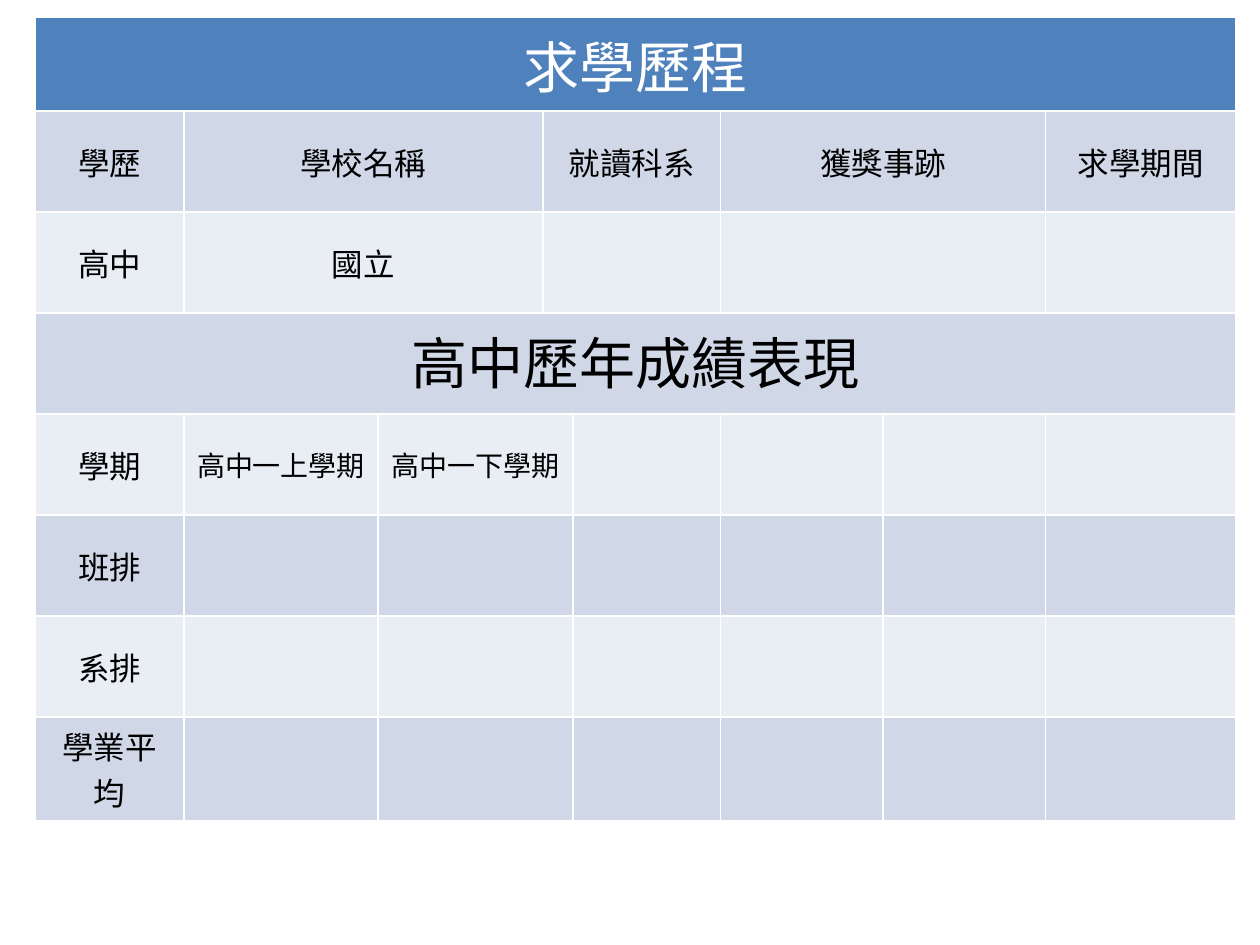
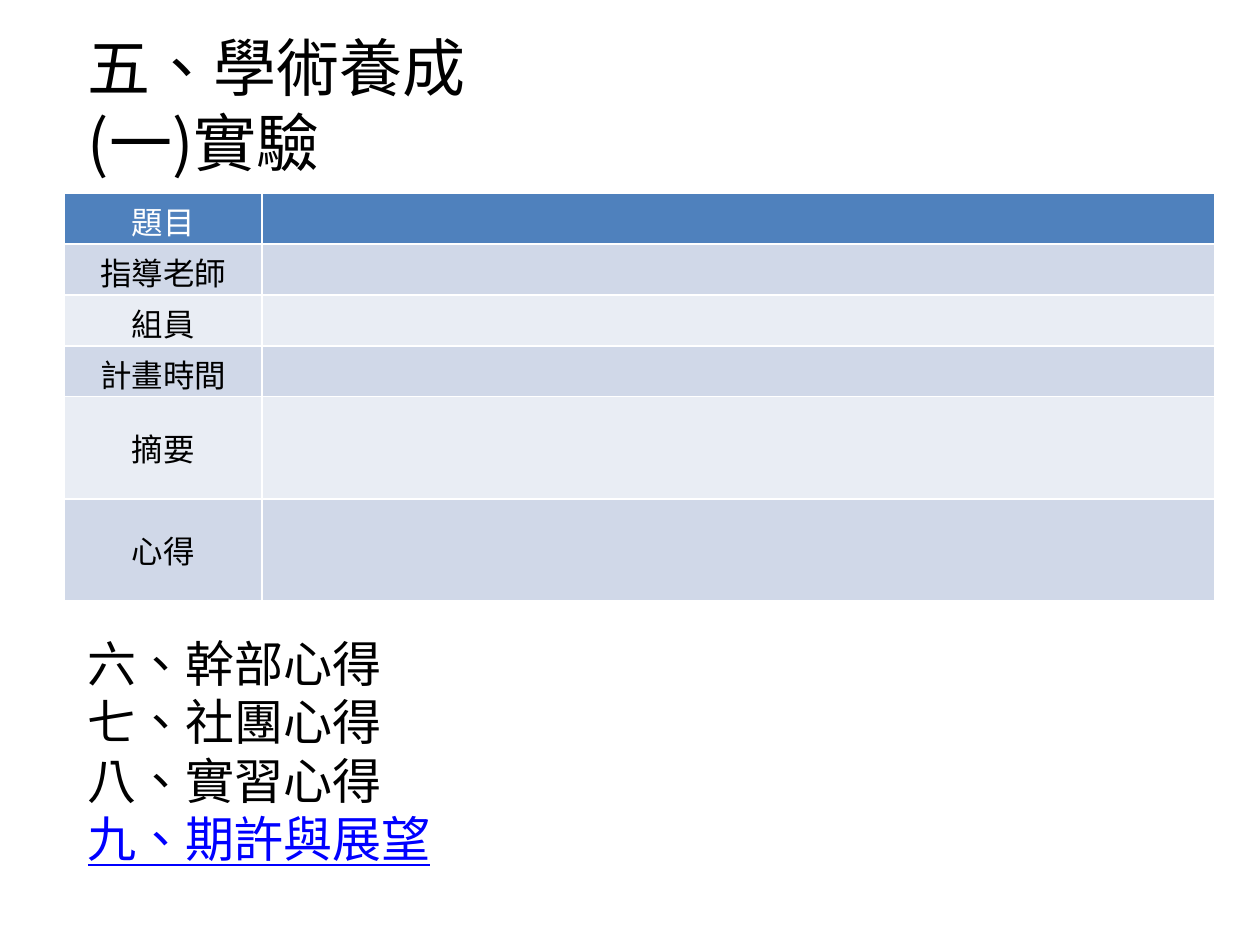
import pptx
import pptx.util
import pptx.dml.color
import pptx.enum.lang
import pptx.enum.text
import pptx.oxml.ns
from lxml import etree

WIDE, HIGH = pptx.util.Inches(10), pptx.util.Inches(7.5)
BLUE, DARK, LIGHT = "4F81BD", "D0D8E8", "E9EDF4"
WHITE, BLACK, LINK = "FFFFFF", "000000", "0000FF"
ASIAN = "Noto Sans CJK SC"
MIDDLE = pptx.enum.text.MSO_ANCHOR.MIDDLE
TOP = pptx.enum.text.MSO_ANCHOR.TOP
CENTER = pptx.enum.text.PP_ALIGN.CENTER
LEFT = pptx.enum.text.PP_ALIGN.LEFT


def color(code):
    """Turn a hex string into a colour."""
    return pptx.dml.color.RGBColor.from_string(code)


def area(left, top, width, height):
    """Turn shares of the slide into a box of lengths."""
    return int(left * WIDE), int(top * HIGH), int(width * WIDE), int(height * HIGH)


def split(total, weights):
    """Divide a length in proportion to the weights."""
    return [int(total * part / sum(weights)) for part in weights]


def write(para, text, size=18, font="Arial", ink=BLACK, align=CENTER, line=None, under=False):
    """Fill a paragraph with one formatted run."""
    para.alignment = align
    if line:
        para.line_spacing = pptx.util.Pt(line)
    run = para.add_run()
    run.text = text
    style = run.font
    style.size = pptx.util.Pt(size)
    style.name = font
    style.bold = False
    style.underline = under
    style.color.rgb = color(ink)
    style.language_id = pptx.enum.lang.MSO_LANGUAGE_ID.TRADITIONAL_CHINESE
    props = run._r.get_or_add_rPr()
    east = etree.SubElement(props, pptx.oxml.ns.qn("a:ea"))
    east.set("typeface", ASIAN)


def lines(slide, box, texts, size, line, links=()):
    """Place a list of plain lines in a text box."""
    frame = slide.shapes.add_textbox(*box).text_frame
    frame.word_wrap = True
    for index, text in enumerate(texts):
        para = frame.add_paragraph() if index else frame.paragraphs[0]
        linked = text in links
        write(para, text, size=size, font=ASIAN, align=LEFT, line=line,
              ink=LINK if linked else BLACK, under=linked)


def grid(slide, box, cols, rows):
    """Add a table with a blue head row and banded rows below."""
    table = slide.shapes.add_table(len(rows), len(cols), *box).table
    for col, width in zip(table.columns, split(box[2], cols)):
        col.width = width
    for index, (row, height) in enumerate(zip(table.rows, split(box[3], rows))):
        row.height = height
        for cell in row.cells:
            cell.fill.solid()
            cell.fill.fore_color.rgb = color((DARK if index % 2 else LIGHT) if index else BLUE)
            cell.vertical_anchor = MIDDLE
    return table


def label(table, row, col, text, **style):
    """Write the text of one table cell."""
    write(table.cell(row, col).text_frame.paragraphs[0], text, **style)


def merge(table, row, first, last):
    """Join the cells of a row from first to last."""
    table.cell(row, first).merge(table.cell(row, last))


def school(slide, box):
    """Build the table of schooling and yearly marks."""
    table = grid(slide, box, [1.18, 1.54, 1.31, 0.24, 1.17, 1.29, 1.29, 1.51],
                 [0.74] + [0.8] * 6 + [0.82])
    for row, text, ink in ((0, "求學歷程", WHITE), (3, "高中歷年成績表現", BLACK)):
        merge(table, row, 0, 7)
        table.cell(row, 0).vertical_anchor = TOP
        label(table, row, 0, text, size=32, ink=ink)
    for row in (1, 2):
        for first in (1, 3, 5):
            merge(table, row, first, first + 1)
    for row in range(4, 8):
        merge(table, row, 2, 3)
    heads = ["學歷", "學校名稱", "就讀科系", "獲獎事跡", "求學期間"]
    for col, text in zip((0, 1, 3, 5, 7), heads):
        label(table, 1, col, text)
    for col, text in enumerate(["高中", "國立"]):
        label(table, 2, col, text)
    for row, text in enumerate(["學期", "班排", "系排", "學業平均"], 4):
        label(table, row, 0, text)
    for col, text in enumerate(["高中一上學期", "高中一下學期"], 1):
        label(table, 4, col, text, size=16, font="Calibri")


def study(slide, box):
    """Build the form that describes an experiment."""
    table = grid(slide, box, [1.57, 7.56], [1] * 4 + [2] * 2)
    names = ["題目", "指導老師", "組員", "計畫時間", "摘要", "心得"]
    for row, text in enumerate(names):
        label(table, row, 0, text, ink=BLACK if row else WHITE)
        if row < 4:
            for cell in table.rows[row].cells:
                cell.margin_top = pptx.util.Inches(0.04)
                cell.margin_bottom = 0


def main():
    """Build both slides and save the deck."""
    deck = pptx.Presentation()
    deck.slide_width, deck.slide_height = WIDE, HIGH
    blank = deck.slide_layouts[6]
    school(deck.slides.add_slide(blank), area(0.028, 0.018, 0.953, 0.85))
    page = deck.slides.add_slide(blank)
    lines(page, area(0.06, 0.024, 0.91, 0.17), ["五、學術養成", "(一)實驗"], 36, 42.9)
    study(page, area(0.051, 0.204, 0.913, 0.432))
    last = "九、期許與展望"
    lines(page, area(0.06, 0.664, 0.91, 0.26),
          ["六、幹部心得", "七、社團心得", "八、實習心得", last], 28, 33.4, links=[last])
    deck.save("out.pptx")


if __name__ == "__main__":
    main()
